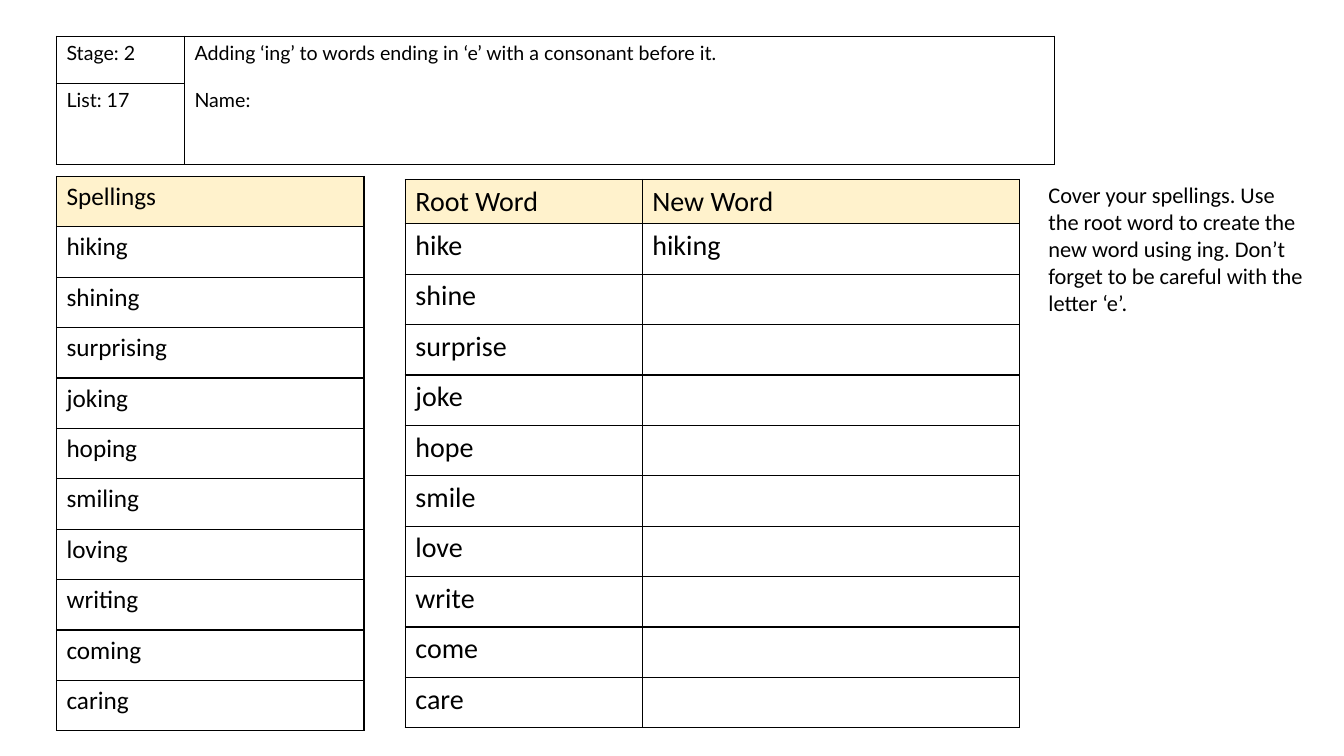
from dataclasses import dataclass

from lxml.etree import SubElement
from pptx import Presentation
from pptx.dml.color import RGBColor
from pptx.enum.text import MSO_AUTO_SIZE as AutoSize
from pptx.oxml.ns import qn
from pptx.util import Emu, Pt

EMU_PER_PX = 9144


def px(length):
    return Emu(length * EMU_PER_PX)


@dataclass(frozen=True)
class Theme:
    ink: str = "000000"
    heading_fill: str = "FFF2CC"
    body_font: str = "Calibri"
    label_font: str = "Lato"
    label_size: int = 14
    note_size: int = 16
    spelling_size: int = 18
    root_size: int = 20
    name_gap: int = 17
    border: int = 1


class Worksheet:
    def __init__(self, presentation, theme):
        self.theme = theme
        self.slide = presentation.slides.add_slide(presentation.slide_layouts[6])

    def style(self, paragraph, font, size):
        paragraph.font.name = font
        paragraph.font.size = Pt(size)
        paragraph.font.color.rgb = RGBColor.from_string(self.theme.ink)

    def outline(self, cell):
        properties = cell._tc.get_or_add_tcPr()
        for side in ("lnL", "lnR", "lnT", "lnB"):
            line = SubElement(properties, qn(f"a:{side}"), w=str(Pt(self.theme.border)))
            fill = SubElement(line, qn("a:solidFill"))
            SubElement(fill, qn("a:srgbClr"), val=self.theme.ink)

    def table(self, left, top, widths, heights, rows, font, size, heading=True):
        frame = self.slide.shapes.add_table(
            len(heights), len(widths), px(left), px(top), px(sum(widths)), px(sum(heights))
        )
        table = frame.table
        table.first_row = table.horz_banding = False
        for column, width in zip(table.columns, widths):
            column.width = px(width)
        for index, (row, height, texts) in enumerate(zip(table.rows, heights, rows)):
            row.height = px(height)
            for cell, text in zip(row.cells, texts):
                self.outline(cell)
                if heading and index == 0:
                    cell.fill.solid()
                    cell.fill.fore_color.rgb = RGBColor.from_string(self.theme.heading_fill)
                else:
                    cell.fill.background()
                cell.text = text
                for paragraph in cell.text_frame.paragraphs:
                    self.style(paragraph, font, size)
        return table

    def note(self, left, top, width, height, text):
        box = self.slide.shapes.add_textbox(px(left), px(top), px(width), px(height))
        frame = box.text_frame
        frame.word_wrap = True
        frame.auto_size = AutoSize.SHAPE_TO_FIT_TEXT
        frame.text = text
        self.style(frame.paragraphs[0], self.theme.body_font, self.theme.note_size)


SPELLINGS = {
    "hike": "hiking",
    "shine": "shining",
    "surprise": "surprising",
    "joke": "joking",
    "hope": "hoping",
    "smile": "smiling",
    "love": "loving",
    "write": "writing",
    "come": "coming",
    "care": "caring",
}
EXAMPLE = "hike"
ROW_HEIGHT = 50


def main():
    presentation = Presentation()
    presentation.slide_width, presentation.slide_height = px(1333), px(750)
    theme = Theme()
    sheet = Worksheet(presentation, theme)
    word_heights = [ROW_HEIGHT] * len(SPELLINGS)

    sheet.table(
        56, 175, [305], [ROW_HEIGHT, *word_heights],
        [["Spellings"], *([word] for word in SPELLINGS.values())],
        theme.body_font, theme.spelling_size,
    )

    objective = "Adding ‘ing’ to words ending in ‘e’ with a consonant before it.\nName:"
    header = sheet.table(
        56, 36, [127, 863], [47, 80],
        [["Stage: 2", objective], ["List: 17", ""]],
        theme.label_font, theme.label_size, heading=False,
    )
    objective_cell = header.cell(0, 1)
    objective_cell.merge(header.cell(1, 1))
    objective_cell.text_frame.paragraphs[1].space_before = Pt(theme.name_gap)

    answers = [[root, word if root == EXAMPLE else ""] for root, word in SPELLINGS.items()]
    sheet.table(
        402, 178, [235, 374], [44, *word_heights],
        [["Root Word", "New Word"], *answers],
        theme.body_font, theme.root_size,
    )

    sheet.note(
        1030, 175, 277, 172,
        "Cover your spellings. Use the root word to create the new word using ing. "
        "Don’t forget to be careful with the letter ‘e’.",
    )
    presentation.save("out.pptx")


if __name__ == "__main__":
    main()
